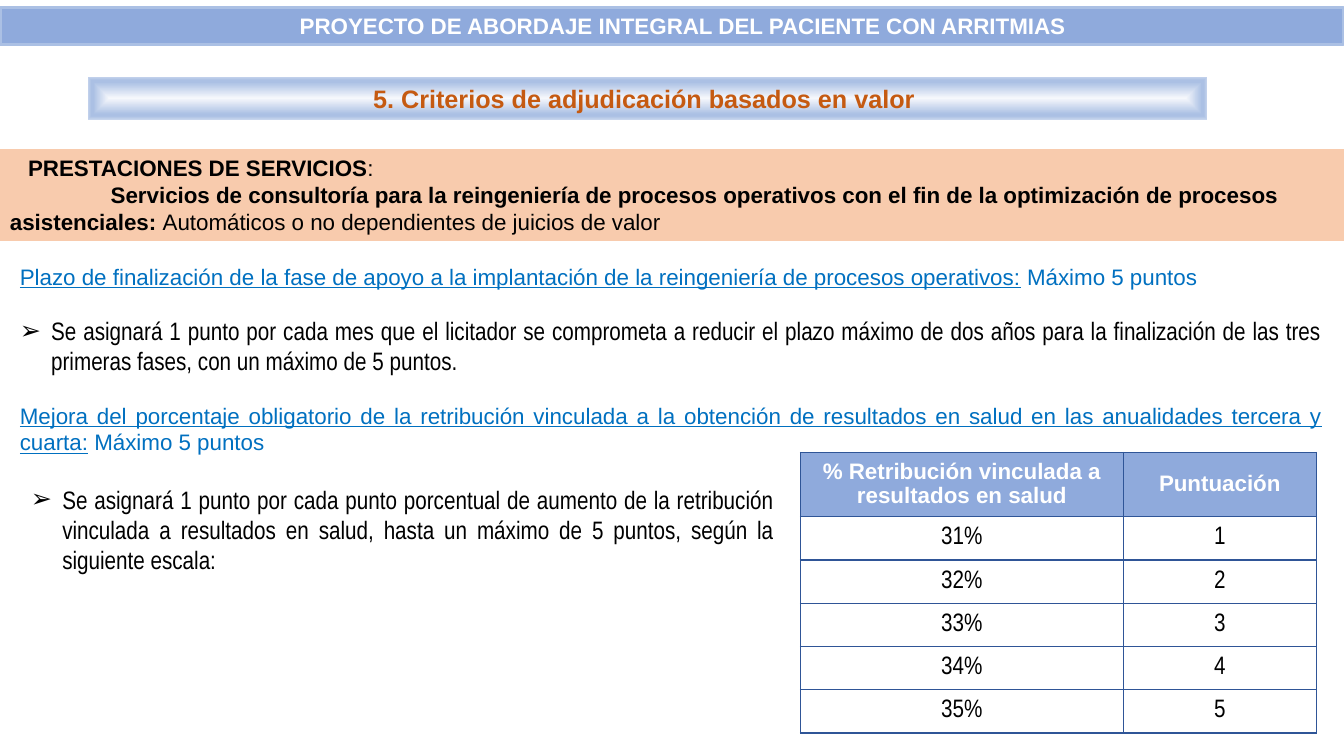
from lxml import etree
from pptx import Presentation
from pptx.dml.color import RGBColor
from pptx.enum.shapes import MSO_SHAPE
from pptx.enum.text import MSO_ANCHOR, PP_ALIGN
from pptx.oxml import parse_xml
from pptx.oxml.ns import nsdecls, qn
from pptx.util import Cm, Pt

LEFT, CENTER, JUSTIFY = PP_ALIGN.LEFT, PP_ALIGN.CENTER, PP_ALIGN.JUSTIFY
MIDDLE, TOP = MSO_ANCHOR.MIDDLE, MSO_ANCHOR.TOP
RECTANGLE = MSO_SHAPE.RECTANGLE

WHITE = RGBColor(0xFF, 0xFF, 0xFF)
BLACK = RGBColor(0x00, 0x00, 0x00)
ORANGE = RGBColor(0xC5, 0x5A, 0x11)
PEACH = RGBColor(0xF8, 0xCB, 0xAD)
LINK_BLUE = RGBColor(0x00, 0x70, 0xC0)
HEADER_BLUE = RGBColor(0x8F, 0xAA, 0xDC)
PALE_BLUE = RGBColor(0xAB, 0xC0, 0xE4)
BORDER_BLUE = RGBColor(0x2F, 0x55, 0x97)
BANNER_STOPS = [(0, "F6F8FC"), (74, "ABC0E4"), (83, "ABC0E4"), (100, "C7D5ED")]

# Text styles: font, size, colour, bold, underlined
TITLE = ("Arial", 16, WHITE, True, False)
SECTION = ("Arial", 18, ORANGE, True, False)
STRONG = ("Arial", 16, BLACK, True, False)
PLAIN = ("Arial", 16, BLACK, False, False)
CRITERION = ("Arial", 16, LINK_BLUE, False, True)
POINTS = ("Arial", 16, LINK_BLUE, False, False)
BODY = ("Arial Narrow", 18, BLACK, False, False)

PROJECT = "PROYECTO DE ABORDAJE INTEGRAL DEL PACIENTE CON ARRITMIAS"
SECTION_TITLE = "5. Criterios de adjudicación basados en valor "
SERVICE_HEADING = [("PRESTACIONES DE SERVICIOS", STRONG), (":", PLAIN)]
SERVICE_DETAIL = [
    ("Servicios de consultoría para la reingeniería de procesos operativos con el fin "
     "de la optimización de procesos asistenciales: ", STRONG),
    ("Automáticos o no dependientes de juicios de valor", PLAIN),
]
DEADLINE = [
    ("Plazo de finalización de la fase de apoyo a la implantación de la reingeniería "
     "de procesos operativos:", CRITERION),
    (" Máximo 5 puntos", POINTS),
]
DEADLINE_RULE = [
    ("Se asignará 1 punto por cada mes que el licitador se comprometa a reducir el plazo "
     "máximo de dos años para la finalización de las tres primeras fases, con un máximo "
     "de 5 puntos.", BODY),
]
PAYMENT = [
    ("Mejora del porcentaje obligatorio de la retribución vinculada a la obtención de "
     "resultados en salud en las anualidades tercera y cuarta:", CRITERION),
    (" Máximo 5 puntos", POINTS),
]
PAYMENT_RULE = [
    ("Se asignará 1 punto por cada punto porcentual de aumento de la retribución vinculada "
     "a resultados en salud, hasta un máximo de 5 puntos, según la siguiente escala:", BODY),
]
SCORES = [
    ("% Retribución vinculada a resultados en salud", "Puntuación"),
    ("31%", "1"), ("32%", "2"), ("33%", "3"), ("34%", "4"), ("35%", "5"),
]
COLUMN_WIDTHS = (Cm(8.14), Cm(4.86))
HEADER_HEIGHT, ROW_HEIGHT = Cm(1.62), Cm(1.09)
BULLET_INDENT = Cm(0.79)
BLANK_LINE = Pt(18.4)


def write(paragraph, runs, align=LEFT, before=0, margin=0, indent=0, bullet=None):
    paragraph.alignment = align
    paragraph.space_before = before
    properties = paragraph._p.get_or_add_pPr()
    properties.set("marL", str(int(margin)))
    properties.set("indent", str(int(indent)))
    if bullet:
        etree.SubElement(properties, qn("a:buFont")).set("typeface", "Arial")
        etree.SubElement(properties, qn("a:buChar")).set("char", bullet)
    for text, (font, size, color, bold, underline) in runs:
        run = paragraph.add_run()
        run.text = text
        run.font.name = font
        run.font.size = Pt(size)
        run.font.color.rgb = color
        run.font.bold = bold
        run.font.underline = underline


def write_rule(paragraph, runs, before=0):
    write(paragraph, runs, JUSTIFY, before, BULLET_INDENT, -BULLET_INDENT, "➢")


def add_bar(slide, left, top, width, height, fill=None, anchor=TOP):
    shape = slide.shapes.add_shape(RECTANGLE, left, top, width, height)
    shape.shadow.inherit = False
    shape.line.fill.background()
    if fill is not None:
        shape.fill.solid()
        shape.fill.fore_color.rgb = fill
    shape.text_frame.word_wrap = True
    shape.text_frame.vertical_anchor = anchor
    return shape


def add_text_frame(slide, left, top, width, height):
    frame = slide.shapes.add_textbox(left, top, width, height).text_frame
    frame.word_wrap = True
    return frame


def fill_from_center(shape, stops):
    """Give the shape a gradient that runs from its centre to its outline."""
    stop_xml = "".join(
        f'<a:gs pos="{position * 1000}"><a:srgbClr val="{color}"/></a:gs>'
        for position, color in stops)
    gradient = parse_xml(
        f'<a:gradFill {nsdecls("a")} rotWithShape="1"><a:gsLst>{stop_xml}</a:gsLst>'
        '<a:path path="shape"><a:fillToRect l="50000" t="50000" r="50000" b="50000"/>'
        '</a:path></a:gradFill>')
    shape._element.spPr.find(qn("a:prstGeom")).addnext(gradient)


def set_borders(cell):
    properties = cell._tc.get_or_add_tcPr()
    for index, side in enumerate(("lnL", "lnR", "lnT", "lnB")):
        properties.insert(index, parse_xml(
            f'<a:{side} {nsdecls("a")} w="{Pt(1)}"><a:solidFill>'
            f'<a:srgbClr val="{BORDER_BLUE}"/></a:solidFill></a:{side}>'))


def add_score_table(slide, left, top):
    height = HEADER_HEIGHT + ROW_HEIGHT * (len(SCORES) - 1)
    table = slide.shapes.add_table(
        len(SCORES), len(COLUMN_WIDTHS), left, top, sum(COLUMN_WIDTHS), height).table
    table.horz_banding = False
    for column, width in zip(table.columns, COLUMN_WIDTHS):
        column.width = width
    for row_index, values in enumerate(SCORES):
        is_header = row_index == 0
        table.rows[row_index].height = HEADER_HEIGHT if is_header else ROW_HEIGHT
        for column_index, value in enumerate(values):
            cell = table.cell(row_index, column_index)
            cell.vertical_anchor = MIDDLE
            cell.margin_top = cell.margin_bottom = Cm(0.1)
            cell.fill.solid()
            cell.fill.fore_color.rgb = HEADER_BLUE if is_header else WHITE
            set_borders(cell)
            paragraph = cell.text_frame.paragraphs[0]
            write(paragraph, [(value, TITLE if is_header else BODY)], CENTER)
            if is_header:
                paragraph.line_spacing = 0.93


def main():
    presentation = Presentation()
    presentation.slide_width, presentation.slide_height = Cm(33.87), Cm(19.05)
    slide = presentation.slides.add_slide(presentation.slide_layouts[6])
    full_width = presentation.slide_width

    banner = add_bar(slide, Cm(2.21), Cm(1.93), Cm(28.22), Cm(1.09))
    fill_from_center(banner, BANNER_STOPS)
    section = banner.text_frame.paragraphs[0]
    write(section, [(SECTION_TITLE, SECTION)], CENTER)
    section.line_spacing = 1.07

    services = add_bar(slide, 0, Cm(3.76), full_width, Cm(2.31), PEACH).text_frame
    write(services.paragraphs[0], SERVICE_HEADING, margin=Cm(0.46))
    write(services.add_paragraph(), SERVICE_DETAIL, indent=Cm(2.54))

    criteria = add_text_frame(slide, Cm(0.25), Cm(6.5), Cm(33.32), Cm(6.68))
    write(criteria.paragraphs[0], DEADLINE, JUSTIFY)
    write_rule(criteria.add_paragraph(), DEADLINE_RULE, BLANK_LINE)
    write(criteria.add_paragraph(), PAYMENT, JUSTIFY, BLANK_LINE)

    add_score_table(slide, Cm(20.17), Cm(11.4))

    scale = add_text_frame(slide, Cm(0.53), Cm(12.07), Cm(19.23), Cm(3.33))
    write_rule(scale.paragraphs[0], PAYMENT_RULE)

    title = add_bar(slide, 0, Cm(0.18), full_width, Cm(0.94), HEADER_BLUE, MIDDLE)
    title.line.color.rgb = PALE_BLUE
    title.line.width = Pt(2.25)
    write(title.text_frame.paragraphs[0], [(PROJECT, TITLE)], CENTER, margin=Cm(0.55))

    presentation.save("out.pptx")


if __name__ == "__main__":
    main()
